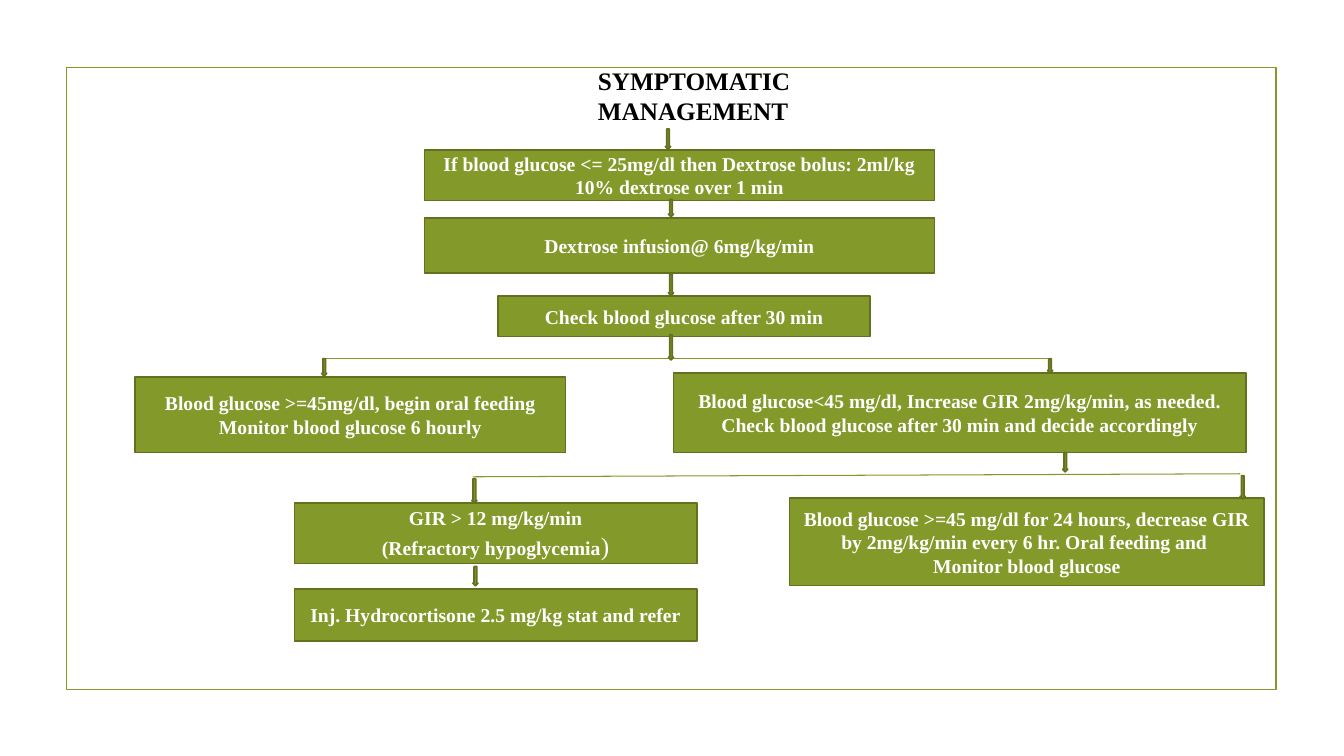
from pptx import Presentation
from pptx.dml.color import RGBColor
from pptx.enum.shapes import MSO_CONNECTOR as Link, MSO_SHAPE as Kind
from pptx.enum.text import MSO_ANCHOR as Anchor, MSO_AUTO_SIZE as Fit, PP_ALIGN as Align
from pptx.util import Inches, Pt
from lxml.etree import SubElement

GREEN = RGBColor(0x83, 0x99, 0x2A)
DARK = RGBColor(0x61, 0x71, 0x1F)
WHITE = RGBColor(0xFF, 0xFF, 0xFF)
BLACK = RGBColor(0, 0, 0)
DML = "{http://schemas.openxmlformats.org/drawingml/2006/main}"

deck = Presentation()
deck.slide_width, deck.slide_height = Inches(13.33), Inches(7.5)
slide = deck.slides.add_slide(deck.slide_layouts[5])


def add_run(para, text, color, size, bold=True):
    run = para.add_run()
    run.text = text
    font = run.font
    font.name, font.size, font.bold = "Times New Roman", Pt(size), bold
    font.color.rgb = color


def add_block(kind, left, top, width, height, edge=DARK):
    block = slide.shapes.add_shape(
        kind, Inches(left), Inches(top), Inches(width), Inches(height))
    block.shadow.inherit = False
    block.fill.solid()
    block.fill.fore_color.rgb = GREEN
    block.line.color.rgb = edge
    block.line.width = Pt(1.25)
    return block


frame = add_block(Kind.RECTANGLE, 0.66, 0.67, 12, 6.17, GREEN)
frame.fill.background()

title = slide.shapes.title
title.left, title.top = Inches(5.83), Inches(0.6)
title.width, title.height = Inches(2.38), Inches(0.71)
body = title.text_frame
body.word_wrap, body.auto_size = True, Fit.NONE
body.vertical_anchor = Anchor.TOP
body.paragraphs[0].alignment = Align.LEFT
add_run(body.paragraphs[0], "SYMPTOMATIC MANAGEMENT", BLACK, 18)

steps = [
    (4.21, 1.49, 5.06, 0.5,
     ["If blood glucose <= 25mg/dl then Dextrose bolus: 2ml/kg 10% dextrose over 1 min"]),
    (4.21, 2.16, 5.06, 0.55, ["Dextrose infusion@ 6mg/kg/min"]),
    (4.94, 2.94, 3.69, 0.4, ["Check blood glucose after 30 min"]),
    (1.34, 3.74, 4.27, 0.75,
     ["Blood glucose >=45mg/dl, begin oral feeding Monitor blood glucose 6 hourly"]),
    (6.68, 3.7, 5.68, 0.79,
     ["Blood glucose<45 mg/dl, Increase GIR 2mg/kg/min, as needed. "
      "Check blood glucose after 30 min and decide accordingly"]),
    (2.92, 4.99, 3.99, 0.6, ["GIR > 12 mg/kg/min", "(Refractory hypoglycemia"]),
    (7.83, 4.94, 4.71, 0.87,
     ["Blood glucose >=45 mg/dl for 24 hours, decrease GIR "
      "by 2mg/kg/min every 6 hr. Oral feeding and ", "Monitor blood glucose"]),
    (2.92, 5.84, 3.99, 0.52, ["Inj. Hydrocortisone 2.5 mg/kg stat and refer"]),
]
for *place, lines in steps:
    body = add_block(Kind.RECTANGLE, *place).text_frame
    body.word_wrap = True
    body.vertical_anchor = Anchor.MIDDLE
    for num, text in enumerate(lines):
        para = body.add_paragraph() if num else body.paragraphs[0]
        para.alignment = Align.CENTER
        add_run(para, text, WHITE, 14)
        if text.startswith("("):
            add_run(para, ")", WHITE, 18, False)

for x1, y1, x2, y2 in [(3.19, 3.56, 10.39, 3.56), (4.69, 4.73, 12.3, 4.7)]:
    branch = slide.shapes.add_connector(
        Link.STRAIGHT, Inches(x1), Inches(y1), Inches(x2), Inches(y2))
    branch.line.color.rgb = GREEN
    branch.line.width = Pt(0.75)
    SubElement(branch._element.spPr, DML + "effectLst")

arrows = [
    (6.6, 1.28, 0.2), (6.63, 1.98, 0.17), (6.63, 2.72, 0.21), (6.63, 3.32, 0.25),
    (3.19, 3.56, 0.17), (10.39, 3.56, 0.14), (10.54, 4.49, 0.19),
    (4.68, 4.75, 0.24), (12.3, 4.72, 0.23), (4.69, 5.62, 0.19),
]
for left, top, height in arrows:
    add_block(Kind.DOWN_ARROW, left, top, 0.05, height)

deck.save("out.pptx")
